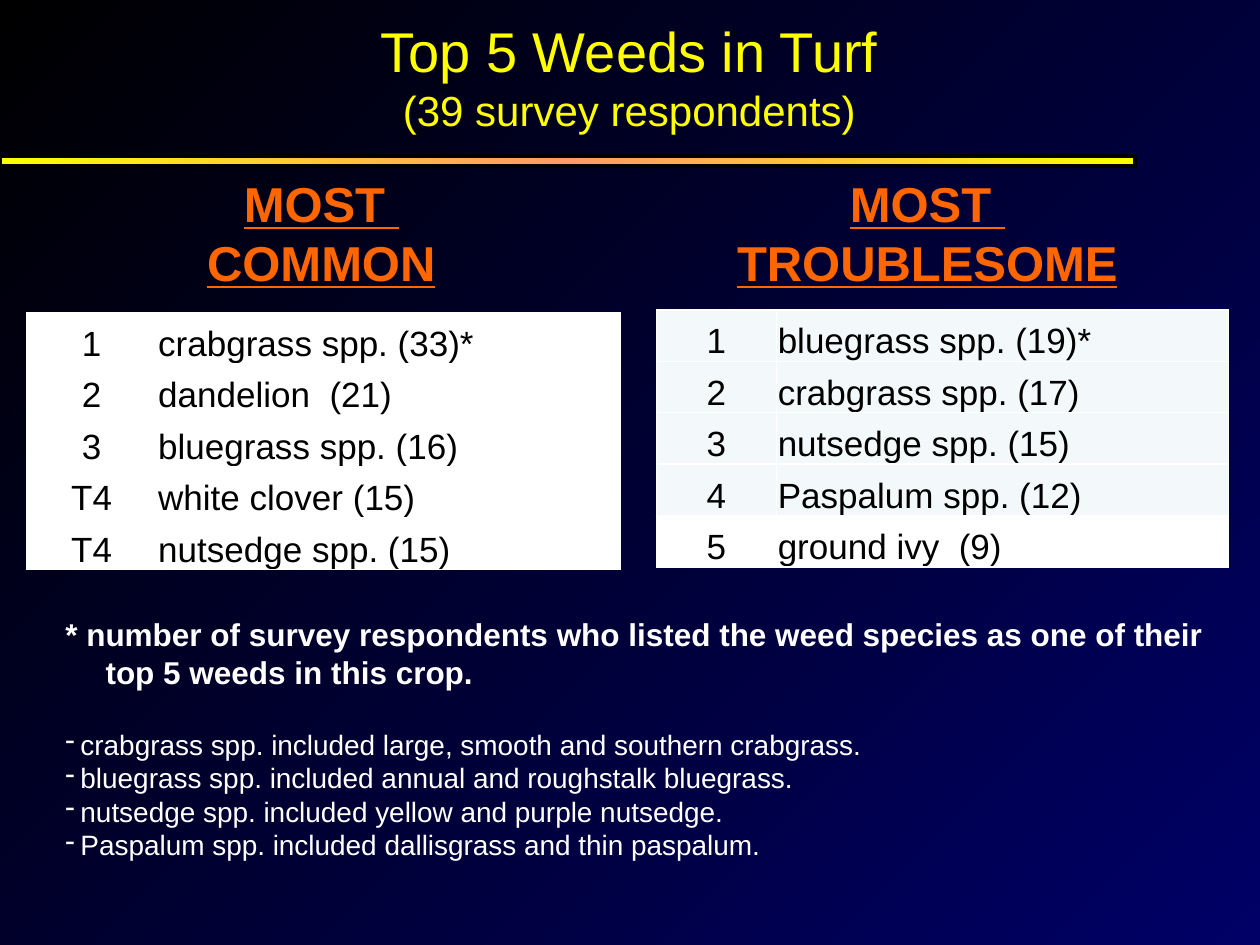
from copy import deepcopy
from dataclasses import dataclass

from lxml.etree import SubElement
from pptx import Presentation
from pptx.dml.color import RGBColor
from pptx.enum.shapes import MSO_SHAPE
from pptx.enum.text import MSO_ANCHOR as Anchor, MSO_AUTO_SIZE as AutoSize, PP_ALIGN as Align
from pptx.oxml.ns import qn
from pptx.util import Inches, Pt

SLIDE_W, SLIDE_H = Inches(10), Inches(7.5)


@dataclass(frozen=True)
class Theme:
    """Colours, font and type sizes of the slide."""
    font: str = "Arial"
    yellow: str = "FFFF00"
    peach: str = "FF9966"
    orange: str = "FF6600"
    black: str = "000000"
    navy: str = "000066"
    white: str = "FFFFFF"
    pale: str = "F3F9FA"
    title: int = 32
    subtitle: int = 24
    heading: int = 28
    cell: int = 20
    note: int = 18
    detail: int = 16


THEME = Theme()

COMMON = [("1", "crabgrass spp. (33)*"), ("2", "dandelion  (21)"),
          ("3", "bluegrass spp. (16)"), ("T4", "white clover (15)"),
          ("T4", "nutsedge spp. (15)")]
TROUBLESOME = [("1", "bluegrass spp. (19)*"), ("2", "crabgrass spp. (17)"),
               ("3", "nutsedge spp. (15)"), ("4", "Paspalum spp. (12)"),
               ("5", "ground ivy  (9)")]
FOOTNOTE = ("* number of survey respondents who listed the weed species "
            "as one of their  top 5 weeds in this crop.")
SPECIES_NOTES = ["crabgrass spp. included large, smooth and southern crabgrass.",
                 "bluegrass spp. included annual and roughstalk bluegrass.",
                 "nutsedge spp. included yellow and purple nutsedge.",
                 "Paspalum spp. included dallisgrass and thin paspalum."]


def share(left, top, width, height):
    """Turn percentages of the slide's size into a position and size."""
    return (int(SLIDE_W * left / 100), int(SLIDE_H * top / 100),
            int(SLIDE_W * width / 100), int(SLIDE_H * height / 100))


def write(frame, text, *, size, color, align=Align.LEFT, bold=False,
          underline=False, before=0, hanging=0, bullet=None):
    """Write one formatted paragraph into a text frame."""
    paragraph = frame.paragraphs[0]
    if paragraph.runs:
        paragraph = frame.add_paragraph()
    paragraph.alignment = align
    paragraph.space_before = Pt(before)
    run = paragraph.add_run()
    run.text = text
    run.font.name, run.font.size = THEME.font, Pt(size)
    run.font.bold, run.font.underline = bold, underline
    run.font.color.rgb = RGBColor.from_string(color)
    if hanging:
        props = paragraph._p.get_or_add_pPr()
        props.set("marL", str(Inches(hanging)))
        props.set("indent", str(-Inches(hanging)))
        if bullet:
            SubElement(props, qn("a:buChar")).set("char", bullet)


def paint_gradient(fill, owner, colors, angle):
    """Fill with evenly spaced colour stops."""
    fill.gradient()
    fill.gradient_angle = angle
    stop_list = next(owner.iter(qn("a:gsLst")))
    while len(stop_list) < len(colors):
        stop_list.append(deepcopy(stop_list[0]))
    for index, (stop, color) in enumerate(zip(fill.gradient_stops, colors)):
        stop.color.rgb = RGBColor.from_string(color)
        stop.position = index / (len(colors) - 1)


def add_title(slide):
    """Place the title and its subtitle line."""
    title = slide.shapes.title
    title.left, title.top, title.width, title.height = share(3.3, 0, 93.3, 16)
    frame = title.text_frame
    frame.auto_size, frame.vertical_anchor = AutoSize.NONE, Anchor.MIDDLE
    for text, size in (("Top 5 Weeds in Turf", THEME.title),
                       ("(39 survey respondents)", THEME.subtitle)):
        write(frame, text, size=size, color=THEME.yellow, align=Align.CENTER)


def add_divider(slide):
    """Draw the gradient bar below the title."""
    bar = slide.shapes.add_shape(MSO_SHAPE.RECTANGLE, *share(0, 16.53, 90.1, 1.07))
    bar.shadow.inherit = False
    paint_gradient(bar.fill, bar._element, (THEME.yellow, THEME.peach, THEME.yellow), 0)
    bar.line.color.rgb = RGBColor.from_string(THEME.black)
    bar.line.width = Pt(2.25)


def add_text_box(slide, place):
    """Add a wrapping text box and return its frame."""
    frame = slide.shapes.add_textbox(*share(*place)).text_frame
    frame.word_wrap = True
    return frame


def add_heading(slide, place, lines):
    """Add an underlined heading above a table."""
    frame = add_text_box(slide, place)
    for line in lines:
        write(frame, line, size=THEME.heading, color=THEME.orange,
              align=Align.CENTER, bold=True, underline=True)


def add_borders(cell):
    """Give a cell thin white borders."""
    props = cell._tc.get_or_add_tcPr()
    for position, side in enumerate(("lnL", "lnR", "lnT", "lnB")):
        border = SubElement(props, qn(f"a:{side}"), w=str(Pt(1)))
        color = SubElement(SubElement(border, qn("a:solidFill")), qn("a:srgbClr"))
        color.set("val", THEME.white)
        props.insert(position, border)


def add_ranking(slide, place, rank_share, weeds, fills):
    """Add a table of ranks and weeds with one fill per row."""
    left, top, width, height = share(*place)
    table = slide.shapes.add_table(len(weeds), 2, left, top, width, height).table
    table.first_row = table.horz_banding = False
    rank_width = int(width * rank_share)
    table.columns[0].width, table.columns[1].width = rank_width, width - rank_width
    for row, (entry, fill) in enumerate(zip(weeds, fills)):
        for column, (text, align) in enumerate(zip(entry, (Align.CENTER, Align.LEFT))):
            cell = table.cell(row, column)
            cell.margin_left = cell.margin_right = cell.margin_top = Inches(0.01)
            cell.margin_bottom = 0
            cell.vertical_anchor = Anchor.BOTTOM
            cell.fill.solid()
            cell.fill.fore_color.rgb = RGBColor.from_string(fill)
            add_borders(cell)
            write(cell.text_frame, text, size=THEME.cell, color=THEME.black, align=align)


def add_notes_text(slide):
    """Add the footnote and the list of included species."""
    frame = add_text_box(slide, (4.2, 64.4, 92.5, 27.87))
    write(frame, FOOTNOTE, size=THEME.note, color=THEME.white, bold=True, hanging=0.25)
    for index, text in enumerate(SPECIES_NOTES):
        write(frame, text, size=THEME.detail, color=THEME.white, hanging=0.12,
              bullet="-", before=0 if index else 21)


def main():
    """Build the slide and save it."""
    deck = Presentation()
    deck.slide_width, deck.slide_height = SLIDE_W, SLIDE_H
    slide = deck.slides.add_slide(deck.slide_layouts[5])
    paint_gradient(slide.background.fill, slide._element, (THEME.black, THEME.navy), 315)
    add_title(slide)
    add_divider(slide)
    add_heading(slide, (13.5, 17.73, 24, 13.87), ("MOST ", "COMMON"))
    add_heading(slide, (57.3, 17.73, 32.6, 13.87), ("MOST ", "TROUBLESOME"))
    add_ranking(slide, (2.1, 33.07, 47.1, 27.2), 0.22, COMMON, [THEME.white] * 5)
    add_ranking(slide, (52.1, 32.8, 45.4, 27.2), 0.21, TROUBLESOME,
                [THEME.pale] * 4 + [THEME.white])
    add_notes_text(slide)
    deck.save("out.pptx")


if __name__ == "__main__":
    main()
